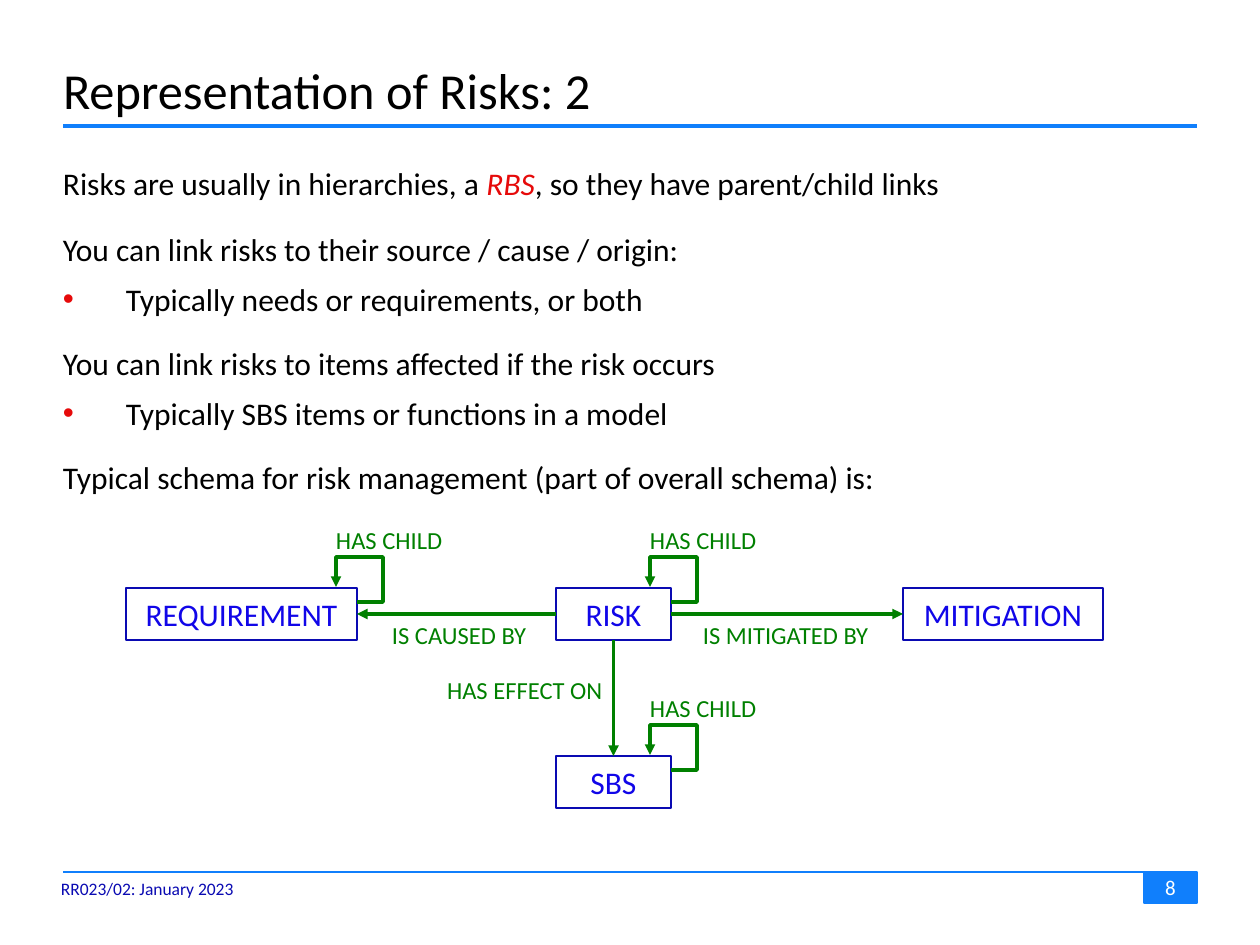
import pptx
import pptx.dml.color
import pptx.enum.shapes
import pptx.enum.text
import pptx.oxml.ns
import pptx.util
from lxml import etree

EMU_PER_PX = 914400 / 126
FONT = "Calibri"
COLORS = {
    "accent": "107FFC",
    "navy": "0A0AB2",
    "entity": "1106E8",
    "link": "008000",
    "red": "E60A0A",
    "black": "000000",
    "white": "FFFFFF",
}
BODY = [
    ("lead", [("Risks are usually in hierarchies, a ", "black"), ("RBS", "red"),
              (", so they have parent/child links", "black")]),
    ("text", [("You can link risks to their source / cause / origin:", "black")]),
    ("bullet", [("Typically needs or requirements, or both", "black")]),
    ("text", [("You can link risks to items affected if the risk occurs", "black")]),
    ("bullet", [("Typically SBS items or functions in a model", "black")]),
    ("text", [("Typical schema for risk management (part of overall schema) is:", "black")]),
]
# Points before and after each kind of paragraph
SPACING = {"lead": (4, 4), "text": (12, 4), "bullet": (3, 3)}
ENTITIES = {
    "RISK": (556, 588, 115, 52),
    "REQUIREMENT": (126, 588, 231, 52),
    "MITIGATION": (903, 588, 200, 52),
    "SBS": (556, 756, 115, 52),
}
TOP, LEFT, BOTTOM, RIGHT = range(4)  # connection sites of a rectangle
LINKS = [
    ("RISK", RIGHT, "MITIGATION", LEFT, "IS MITIGATED BY", (703, 620, 166, 30)),
    ("RISK", LEFT, "REQUIREMENT", RIGHT, "IS CAUSED BY", (392, 620, 135, 30)),
    ("RISK", BOTTOM, "SBS", TOP, "HAS EFFECT ON", (447, 675, 156, 30)),
]


def px(length):
    return pptx.util.Emu(round(length * EMU_PER_PX))


def rgb(name):
    return pptx.dml.color.RGBColor.from_string(COLORS[name])


def add_span(para, text, size, color, italic=False):
    span = para.add_run()
    span.text = text
    span.font.name = FONT
    span.font.size = pptx.util.Pt(size)
    span.font.color.rgb = rgb(color)
    span.font.italic = italic


def set_frame(frame, insets, anchor="TOP", wrap=True):
    """Set the insets (left, top, right, bottom in px), anchor and wrapping."""
    frame.margin_left, frame.margin_top, frame.margin_right, frame.margin_bottom = map(px, insets)
    frame.vertical_anchor = pptx.enum.text.MSO_ANCHOR[anchor]
    frame.word_wrap = wrap
    sizing = pptx.enum.text.MSO_AUTO_SIZE
    frame.auto_size = sizing.NONE if wrap else sizing.SHAPE_TO_FIT_TEXT


def set_line(shape, color, width, arrow=False):
    shape.line.color.rgb = rgb(color)
    shape.line.width = pptx.util.Pt(width)
    if arrow:
        outline = shape.element.spPr.find(pptx.oxml.ns.qn("a:ln"))
        etree.SubElement(outline, pptx.oxml.ns.qn("a:tailEnd"), type="triangle")


def add_line(page, start, end, color, width):
    line = page.shapes.add_connector(
        pptx.enum.shapes.MSO_CONNECTOR.STRAIGHT, *map(px, start + end))
    set_line(line, color, width)
    etree.SubElement(line.element.spPr, pptx.oxml.ns.qn("a:effectLst"))


def add_box(page, bounds, text, size, color, fill, outline):
    box = page.shapes.add_shape(
        pptx.enum.shapes.MSO_SHAPE.RECTANGLE, *map(px, bounds))
    box.shadow.inherit = False
    box.fill.solid()
    box.fill.fore_color.rgb = rgb(fill)
    set_line(box, outline, 1)
    set_frame(box.text_frame, (6, 6, 6, 6), "MIDDLE")
    para = box.text_frame.paragraphs[0]
    para.alignment = pptx.enum.text.PP_ALIGN.CENTER
    add_span(para, text, size, color)
    return box


def add_label(page, bounds, text, size=14, color="link", insets=(0, 0, 0, 0)):
    label = page.shapes.add_textbox(*map(px, bounds))
    set_frame(label.text_frame, insets, wrap=False)
    add_span(label.text_frame.paragraphs[0], text, size, color)


def add_link(page, source, source_site, target, target_site):
    link = page.shapes.add_connector(pptx.enum.shapes.MSO_CONNECTOR.STRAIGHT, 0, 0, 0, 0)
    link.begin_connect(source, source_site)
    link.end_connect(target, target_site)
    set_line(link, "link", 2, arrow=True)
    etree.SubElement(link.element.spPr, pptx.oxml.ns.qn("a:effectLst"))


def add_child_loop(page, bounds):
    """Draw the labelled arrow from an entity's right edge back to its top."""
    left, top, width, _ = bounds
    right = left + width
    tip, outer, peak = right - 21, right + 26, top - 31
    builder = page.shapes.build_freeform(right, top + 14, scale=EMU_PER_PX)
    builder.add_line_segments(
        [(outer, top + 14), (outer, peak), (tip, peak), (tip, top - 1)], close=False)
    loop = builder.convert_to_shape()
    loop.shadow.inherit = False
    loop.fill.background()
    set_line(loop, "link", 2, arrow=True)
    add_label(page, (tip, top - 63, 107, 30), "HAS CHILD")


def set_title(page, text):
    title = page.shapes.title
    title.left, title.top, title.width, title.height = map(px, (63, 53, 1134, 73))
    set_frame(title.text_frame, (0, 6, 0, 6), "MIDDLE")
    para = title.text_frame.paragraphs[0]
    para.alignment = pptx.enum.text.PP_ALIGN.LEFT
    add_span(para, text, 28.8, "black")


def make_bullet(para):
    properties = para._p.get_or_add_pPr()
    properties.set("marL", str(px(63)))
    properties.set("indent", str(-px(63)))
    bullet_color = etree.SubElement(properties, pptx.oxml.ns.qn("a:buClr"))
    etree.SubElement(bullet_color, pptx.oxml.ns.qn("a:srgbClr"), val=COLORS["red"])
    etree.SubElement(properties, pptx.oxml.ns.qn("a:buFont"), typeface="Arial")
    etree.SubElement(properties, pptx.oxml.ns.qn("a:buChar"), char="•")


def add_body(page):
    body = page.shapes.add_textbox(*map(px, (63, 158, 1134, 687)))
    frame = body.text_frame
    set_frame(frame, (0, 6, 0, 6))
    for index, (kind, spans) in enumerate(BODY):
        para = frame.add_paragraph() if index else frame.paragraphs[0]
        para.space_before, para.space_after = map(pptx.util.Pt, SPACING[kind])
        if kind == "bullet":
            make_bullet(para)
        for text, color in spans:
            add_span(para, text, 18, color, italic=color == "red")


def add_schema(page):
    boxes = {name: add_box(page, bounds, name, 18, "entity", "white", "navy")
             for name, bounds in ENTITIES.items()}
    for name in ("RISK", "SBS", "REQUIREMENT"):
        add_child_loop(page, ENTITIES[name])
    for source, source_site, target, target_site, text, bounds in LINKS:
        add_link(page, boxes[source], source_site, boxes[target], target_site)
        add_label(page, bounds, text)


def main():
    deck = pptx.Presentation()
    deck.slide_width, deck.slide_height = px(1260), px(945)
    page = deck.slides.add_slide(deck.slide_layouts[5])
    add_line(page, (63, 126), (1197, 126), "accent", 2)
    add_line(page, (63, 872), (1197, 872), "accent", 1)
    add_box(page, (1144, 872, 53, 31), "8", 12, "white", "accent", "accent")
    add_label(page, (61, 872, 188, 34), "RR023/02: January 2023", 10, "navy", (0, 6, 13, 6))
    set_title(page, "Representation of Risks: 2")
    add_body(page)
    add_schema(page)
    deck.save("out.pptx")


if __name__ == "__main__":
    main()
